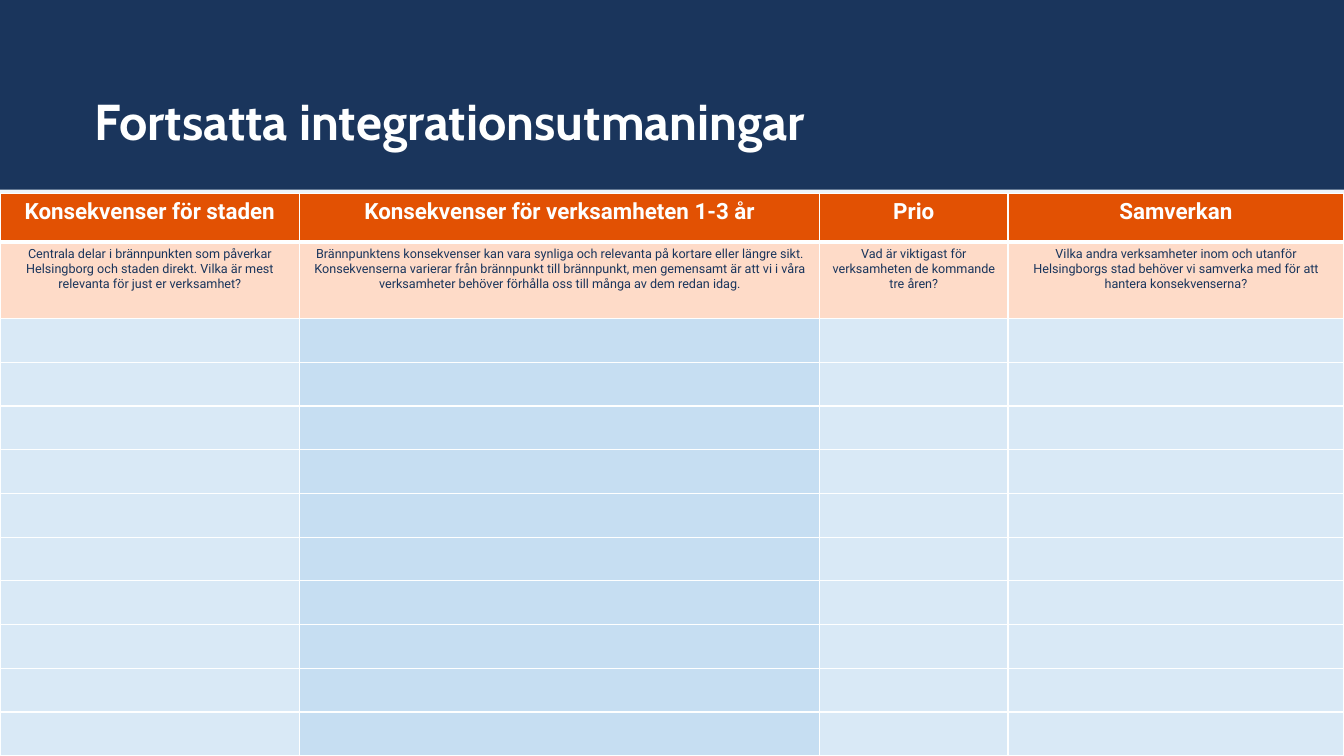
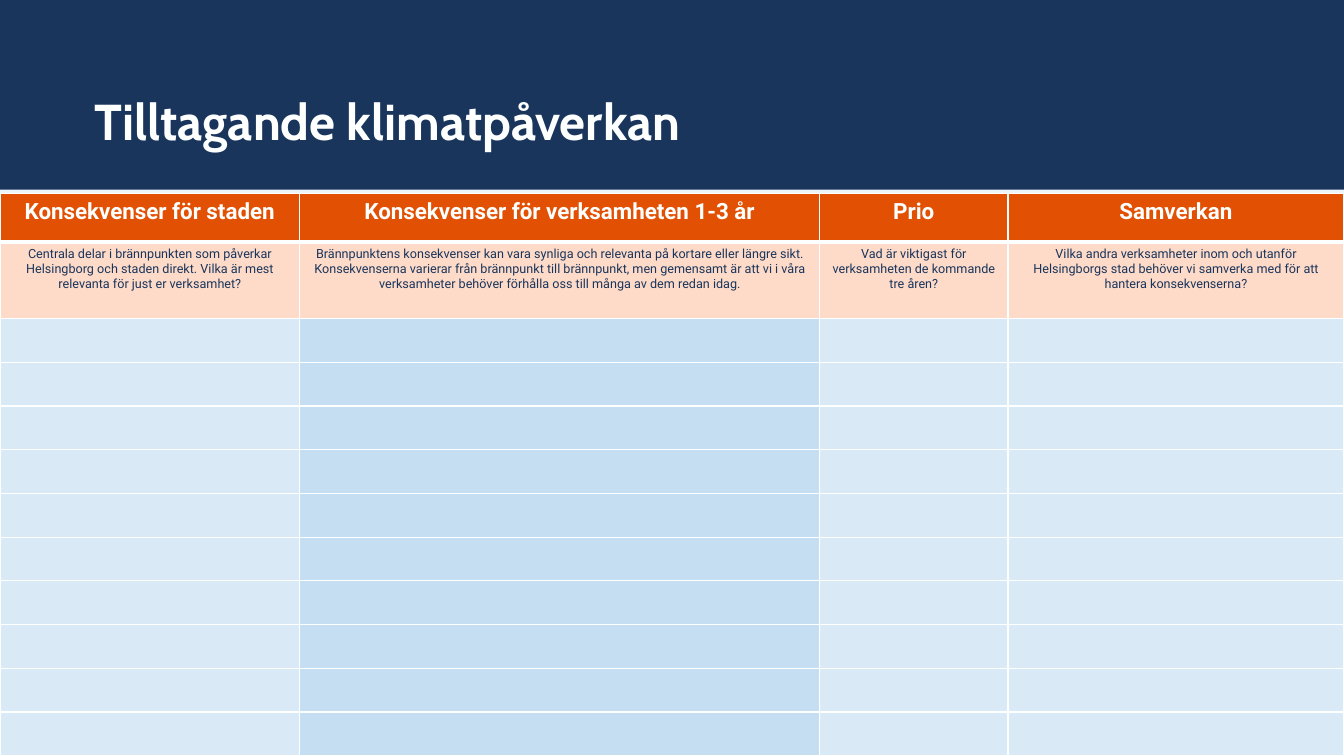
import pptx
import pptx.dml.color
import pptx.enum.shapes
import pptx.enum.text
import pptx.oxml
import pptx.oxml.ns
import pptx.util

Pt = pptx.util.Pt
RGBColor = pptx.dml.color.RGBColor
ALIGN = pptx.enum.text.PP_ALIGN

# Content
TITLES = ["Fortsatta integrationsutmaningar", "Tilltagande klimatpåverkan"]
# heading, guiding question, width in points
COLUMNS = [
    ("Konsekvenser för staden",
     "Centrala delar i brännpunkten som påverkar Helsingborg och staden direkt. "
     "Vilka är mest relevanta för just er verksamhet?", 214),
    ("Konsekvenser för verksamheten 1-3 år",
     "Brännpunktens konsekvenser kan vara synliga och relevanta på kortare eller "
     "längre sikt. Konsekvenserna varierar från brännpunkt till brännpunkt, men "
     "gemensamt är att vi i våra verksamheter behöver förhålla oss till många av "
     "dem redan idag.", 371.5),
    ("Prio", "Vad är viktigast för verksamheten de kommande tre åren?", 134.5),
    ("Samverkan",
     "Vilka andra verksamheter inom och utanför Helsingborgs stad behöver vi "
     "samverka med för att hantera konsekvenserna?", 240),
]
EMPTY_ROWS = 10
SOLID_COLUMN = 1

# Shared style
NAVY = RGBColor(0x1A, 0x35, 0x5C)
WHITE = RGBColor(0xFE, 0xFF, 0xFF)
ORANGE = RGBColor(0xE2, 0x51, 0x03)
PEACH = RGBColor(0xFE, 0xDB, 0xC8)
BLUE = RGBColor(0xC6, 0xDE, 0xF2)
PALE = RGBColor(0xEE, 0xF5, 0xFB)
TITLE_FONT, TABLE_FONT = "Cabin", "Roboto"

SLIDE_W, SLIDE_H = 960, 540
BAND_H = 135.5
TABLE_TOP = 138.5
HEADING_H, QUESTION_H = 34.5, 54.5
EMPTY_H = (SLIDE_H - TABLE_TOP - HEADING_H - QUESTION_H) / EMPTY_ROWS
THIN, THICK = 1, 3


def style_font(font, name, size, color, bold):
    font.name, font.size, font.bold = name, Pt(size), bold
    font.color.rgb = color


def style_layout(layout, slide):
    """Give the layout its background, title place and navy band."""
    layout.background.fill.solid()
    layout.background.fill.fore_color.rgb = PALE
    title = layout.placeholders[0]
    title.left, title.top, title.width, title.height = Pt(67.5), Pt(17.5), Pt(720), Pt(90.5)

    band = slide.shapes.add_shape(
        pptx.enum.shapes.MSO_SHAPE.RECTANGLE, 0, 0, Pt(SLIDE_W), Pt(BAND_H))
    band.shadow.inherit = False
    band.fill.solid()
    band.fill.fore_color.rgb = NAVY
    band.line.fill.background()
    layout.shapes._spTree.insert(2, band._element)


def write_title(slide, text):
    frame = slide.shapes.title.text_frame
    frame.text = text
    frame.word_wrap = True
    frame.auto_size = pptx.enum.text.MSO_AUTO_SIZE.NONE
    frame.vertical_anchor = pptx.enum.text.MSO_ANCHOR.BOTTOM
    frame.margin_left = frame.margin_top = frame.margin_right = frame.margin_bottom = 0
    paragraph = frame.paragraphs[0]
    paragraph.alignment = ALIGN.LEFT
    paragraph.line_spacing = 0.9
    style_font(paragraph.font, TITLE_FONT, 36, WHITE, True)


def fill_cell(cell, color, alpha=100):
    cell.fill.solid()
    cell.fill.fore_color.rgb = color
    if alpha < 100:
        srgb = cell._tc.tcPr.find(".//" + pptx.oxml.ns.qn("a:srgbClr"))
        srgb.append(pptx.oxml.parse_xml(
            f'<a:alpha {pptx.oxml.ns.nsdecls("a")} val="{alpha * 1000}"/>'))


def border_cell(cell, top=THIN, bottom=THIN):
    sides = [("lnL", THIN), ("lnR", THIN), ("lnT", top), ("lnB", bottom)]
    for place, (tag, width) in enumerate(sides):
        cell._tc.tcPr.insert(place, pptx.oxml.parse_xml(
            f'<a:{tag} {pptx.oxml.ns.nsdecls("a")} w="{Pt(width)}">'
            f'<a:solidFill><a:srgbClr val="{WHITE}"/></a:solidFill></a:{tag}>'))


def write_cell(cell, text, size, color, bold):
    cell.text = text
    paragraph = cell.text_frame.paragraphs[0]
    paragraph.alignment = ALIGN.CENTER
    style_font(paragraph.font, TABLE_FONT, size, color, bold)


def add_worksheet(slide):
    heights = [HEADING_H, QUESTION_H] + [EMPTY_H] * EMPTY_ROWS
    worksheet = slide.shapes.add_table(
        len(heights), len(COLUMNS), 0, Pt(TABLE_TOP), Pt(SLIDE_W), Pt(sum(heights))).table
    for row, height in zip(worksheet.rows, heights):
        row.height = Pt(height)

    for c, (heading, question, width) in enumerate(COLUMNS):
        worksheet.columns[c].width = Pt(width)

        heading_cell, question_cell = worksheet.cell(0, c), worksheet.cell(1, c)
        write_cell(heading_cell, heading, 16, WHITE, True)
        fill_cell(heading_cell, ORANGE)
        border_cell(heading_cell, bottom=THICK)
        write_cell(question_cell, question, 9, NAVY, False)
        fill_cell(question_cell, PEACH)
        border_cell(question_cell, top=THICK)

        for r in range(2, len(heights)):
            answer_cell = worksheet.cell(r, c)
            fill_cell(answer_cell, BLUE, 100 if c == SOLID_COLUMN else 50)
            border_cell(answer_cell)


def main():
    deck = pptx.Presentation()
    deck.slide_width, deck.slide_height = Pt(SLIDE_W), Pt(SLIDE_H)
    layout = deck.slide_layouts.get_by_name("Title Only")
    for number, title in enumerate(TITLES):
        slide = deck.slides.add_slide(layout)
        if number == 0:
            style_layout(layout, slide)
        write_title(slide, title)
        add_worksheet(slide)
    deck.save("out.pptx")


if __name__ == "__main__":
    main()
